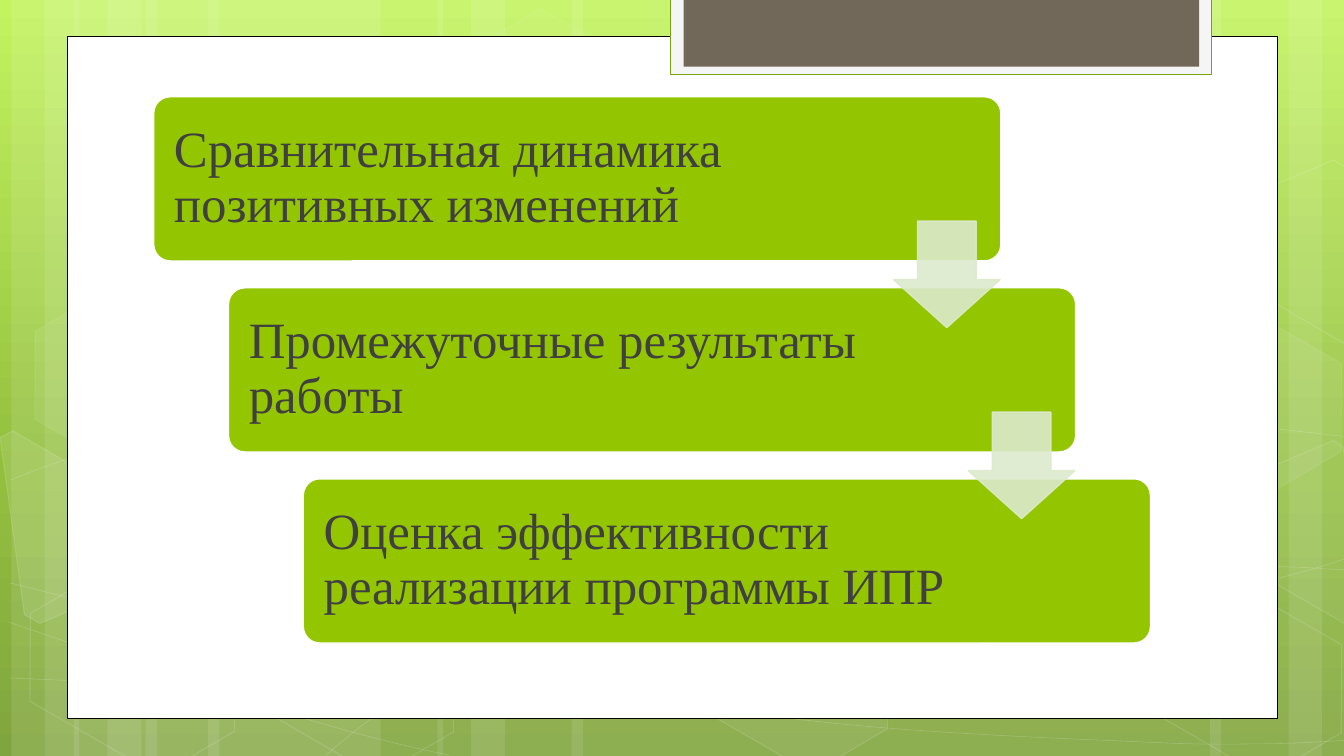
import copy
import dataclasses
import typing

import lxml.etree
import pptx
import pptx.dml.color
import pptx.enum.shapes
import pptx.enum.text
import pptx.oxml.ns
import pptx.util

Inches = pptx.util.Inches
MSO = pptx.enum.shapes.MSO_SHAPE
Point = tuple[float, float]


@dataclasses.dataclass(frozen=True)
class Theme:
    sky: tuple = ((0, "C3F35F"), (0.62, "93BF3F"), (1, "81A53E"))
    white: str = "FFFFFF"
    black: str = "000000"
    tab: str = "F5F5F5"
    tab_line: str = "74A510"
    tab_inner: str = "71685A"
    card: str = "94C600"
    arrow: str = "DCEACC"
    text: str = "404040"
    font: str = "Times New Roman"
    size: float = 45


THEME = Theme()


class Paint(typing.NamedTuple):
    color: str
    alpha: int = 100
    width: float = 0


class Box(typing.NamedTuple):
    left: float
    top: float
    width: float
    height: float


class Hexagon(typing.NamedTuple):
    left: float
    top: float
    fill_alpha: int
    line_alpha: int


class Shard(typing.NamedTuple):
    points: list[Point]
    fill_alpha: int


class Step(typing.NamedTuple):
    text: str
    text_width: float


BARS = [(1.79, 2.89), (0.14, 0.83), (0.55, 1.38), (2.56, 2.89), (0.91, 0.83), (1.32, 1.38),
        (12.13, 2.89), (15.85, 0.83), (14.88, 1.38), (7.03, 5.1), (5.38, 0.83), (5.79, 1.38)]

CURVES = [
    [(0.12, 8.34), (1.01, 8.38), (1.9, 8.42), (3.15, 8.41), (4.39, 8.39), (5.91, 8.37),
     (7.57, 8.25), (9.23, 8.12), (11.58, 7.89), (13.09, 7.65), (14.6, 7.41), (16.15, 7.04),
     (16.65, 6.83)],
    [(0.12, 5.91), (0.59, 5.72), (1.07, 5.53), (2.01, 5.35), (2.95, 5.16), (4.28, 4.89),
     (5.74, 4.8), (7.21, 4.71), (8.99, 4.7), (10.81, 4.8), (12.63, 4.9), (15.66, 5.28),
     (16.65, 5.38)],
    [(0.1, 7.65), (2.09, 8.33), (4.09, 9.01), (5.53, 9.29)],
    [(0.12, 7.17), (0.64, 7.3), (1.15, 7.44), (2.12, 7.63), (3.08, 7.83), (4.52, 8.13),
     (5.9, 8.34), (7.27, 8.55), (9.02, 8.77), (10.38, 8.91), (11.75, 9.04), (13.22, 9.09),
     (14.1, 9.13), (14.97, 9.17), (15.2, 9.15), (15.62, 9.15), (16.05, 9.14), (16.35, 9.12),
     (16.65, 9.1)],
    [(4.01, 9.29), (4.3, 9.04), (4.59, 8.8), (4.99, 8.57), (5.39, 8.34), (5.95, 8.09),
     (6.41, 7.92), (6.87, 7.75), (7.16, 7.68), (7.76, 7.55), (8.37, 7.43), (9.48, 7.25),
     (10.06, 7.17), (10.64, 7.08), (10.73, 7.09), (11.24, 7.05), (11.75, 7.02), (12.56, 6.99),
     (13.13, 6.97), (13.7, 6.96), (14.66, 6.97), (14.66, 6.97), (15.02, 6.97), (15.39, 6.97),
     (15.75, 6.97), (16.06, 6.98), (16.34, 7), (16.48, 7.01), (16.63, 7.01), (16.58, 7.01),
     (16.63, 7.02)],
]

HEXAGONS = [Hexagon(5.52, 0.44, 4, 8), Hexagon(8.21, 7.3, 6, 12), Hexagon(0.18, 7.33, 0, 12),
            Hexagon(0.24, 3.86, 7, 8), Hexagon(2.87, 7.34, 0, 12), Hexagon(13.79, 7.35, 0, 12),
            Hexagon(13.79, 3.89, 7, 8)]

SHARDS = [
    Shard([(0, 5.38), (0.16, 5.3), (1.43, 6.04), (1.58, 7.21), (0.49, 7.67), (0.3, 7.56)], 10),
    Shard([(15.31, 5.88), (16.4, 5.42), (16.52, 5.5), (16.83, 7.75), (16.73, 7.78),
           (15.46, 7.05)], 4),
    Shard([(15.31, 2.43), (16.4, 1.97), (16.54, 2.05), (16.83, 4.29), (16.73, 4.34),
           (15.46, 3.6)], 0),
]

STEPS = [Step("Сравнительная динамика позитивных изменений", 8.24),
         Step("Промежуточные результаты работы", 8.07),
         Step("Оценка эффективности реализации программы ИПР", 8.07)]
FIRST_CARD = Box(1.89, 1.19, 10.42, 2.02)
STEP_RIGHT, STEP_DOWN = 0.92, 2.35


def paint(sp, fill: Paint | None = None, line: Paint | None = None) -> None:
    sp.shadow.inherit = False
    for target, coat, where in ((sp.fill, fill, "a:solidFill"),
                                (sp.line.fill, line, "a:ln/a:solidFill")):
        if coat is None or coat.alpha == 0:
            target.background()
            continue
        target.solid()
        target.fore_color.rgb = pptx.dml.color.RGBColor.from_string(coat.color)
        if coat.alpha < 100:
            clr = sp.element.spPr.xpath(f"./{where}/a:srgbClr")[0]
            lxml.etree.SubElement(clr, pptx.oxml.ns.qn("a:alpha"), val=str(coat.alpha * 1000))
    if line:
        sp.line.width = pptx.util.Pt(line.width)


def add_preset(s, kind, box: Box, fill: Paint | None = None, line: Paint | None = None,
               adjustments: tuple[float, ...] = ()):
    sp = s.shapes.add_shape(kind, *map(Inches, box))
    for i, value in enumerate(adjustments):
        sp.adjustments[i] = value
    paint(sp, fill, line)
    return sp


def add_outline(s, points: list[Point], close: bool, fill: Paint | None, line: Paint):
    start, *rest = [(Inches(x), Inches(y)) for x, y in points]
    builder = s.shapes.build_freeform(*start)
    builder.add_line_segments(rest, close=close)
    sp = builder.convert_to_shape()
    paint(sp, fill, line)
    return sp


def bend(sp) -> None:
    lines = sp.element.xpath(".//a:lnTo")
    for i in range(0, len(lines), 3):
        curve = lxml.etree.Element(pptx.oxml.ns.qn("a:cubicBezTo"))
        lines[i].addprevious(curve)
        for segment in lines[i:i + 3]:
            curve.append(segment[0])
            segment.getparent().remove(segment)


def add_text(s, text: str, box: Box, *, size: float = THEME.size, color: str = THEME.text,
             font: str = THEME.font, inset: float = 0.19, spacing: float = 0.9) -> None:
    tf = s.shapes.add_textbox(*map(Inches, box)).text_frame
    tf.word_wrap = True
    tf.vertical_anchor = pptx.enum.text.MSO_ANCHOR.MIDDLE
    tf.margin_left = tf.margin_right = tf.margin_top = tf.margin_bottom = Inches(inset)
    p = tf.paragraphs[0]
    p.line_spacing = spacing
    r = p.add_run()
    r.text = text
    r.font.size, r.font.name = pptx.util.Pt(size), font
    r.font.color.rgb = pptx.dml.color.RGBColor.from_string(color)


def draw_backdrop(s, height: float) -> None:
    fill = s.background.fill
    fill.gradient()
    fill.gradient_angle = 270
    stops = s.element.xpath(".//p:bg//a:gs")
    stops[0].addnext(copy.deepcopy(stops[0]))
    for stop, (position, color) in zip(fill.gradient_stops, THEME.sky):
        stop.position = position
        stop.color.rgb = pptx.dml.color.RGBColor.from_string(color)
    for left, width in BARS:
        add_preset(s, MSO.RECTANGLE, Box(left, 0, width, height), Paint(THEME.white, 10))
    for knots in CURVES:
        bend(add_outline(s, knots, False, None, Paint(THEME.white, 20, 0.5)))
    for h in HEXAGONS:
        sp = add_preset(s, MSO.HEXAGON, Box(h.left, h.top, 2.9, 1.88),
                        Paint(THEME.white, h.fill_alpha), Paint(THEME.white, h.line_alpha, 1),
                        (0.285,))
        sp.rotation = 30
    for shard in SHARDS:
        add_outline(s, shard.points, True, Paint(THEME.white, shard.fill_alpha),
                    Paint(THEME.white, 12, 1))


def draw_frame(s) -> None:
    add_preset(s, MSO.RECTANGLE, Box(0.83, 0.45, 14.88, 8.39), Paint(THEME.white),
               Paint(THEME.black, width=0.5))
    add_preset(s, MSO.RECTANGLE, Box(8.25, -0.03, 6.65, 0.95), Paint(THEME.tab),
               Paint(THEME.tab_line, width=1.25))
    add_preset(s, MSO.RECTANGLE, Box(8.41, -0.03, 6.34, 0.85), Paint(THEME.tab_inner))


def draw_steps(s) -> None:
    cards = [FIRST_CARD._replace(left=FIRST_CARD.left + i * STEP_RIGHT,
                                 top=FIRST_CARD.top + i * STEP_DOWN) for i in range(len(STEPS))]
    for step, card in zip(STEPS, cards):
        add_preset(s, MSO.ROUNDED_RECTANGLE, card, Paint(THEME.card),
                   Paint(THEME.white, width=1.25), (0.1,))
        add_text(s, step.text, Box(card.left + 0.06, card.top + 0.06, step.text_width, 1.9))
    for card in cards[:-1]:
        add_preset(s, MSO.DOWN_ARROW, Box(card.left + 9.1, card.top + 1.53, 1.31, 1.31),
                   Paint(THEME.arrow, 90), Paint(THEME.arrow, 90, 1.25), (0.55, 0.45))


def main() -> None:
    """Build the slide of three descending steps and save it."""
    prs = pptx.Presentation()
    prs.slide_width, prs.slide_height = Inches(16.53), Inches(9.3)
    s = prs.slides.add_slide(prs.slide_layouts[6])
    draw_backdrop(s, 9.3)
    draw_frame(s)
    draw_steps(s)
    prs.save("out.pptx")


if __name__ == "__main__":
    main()
